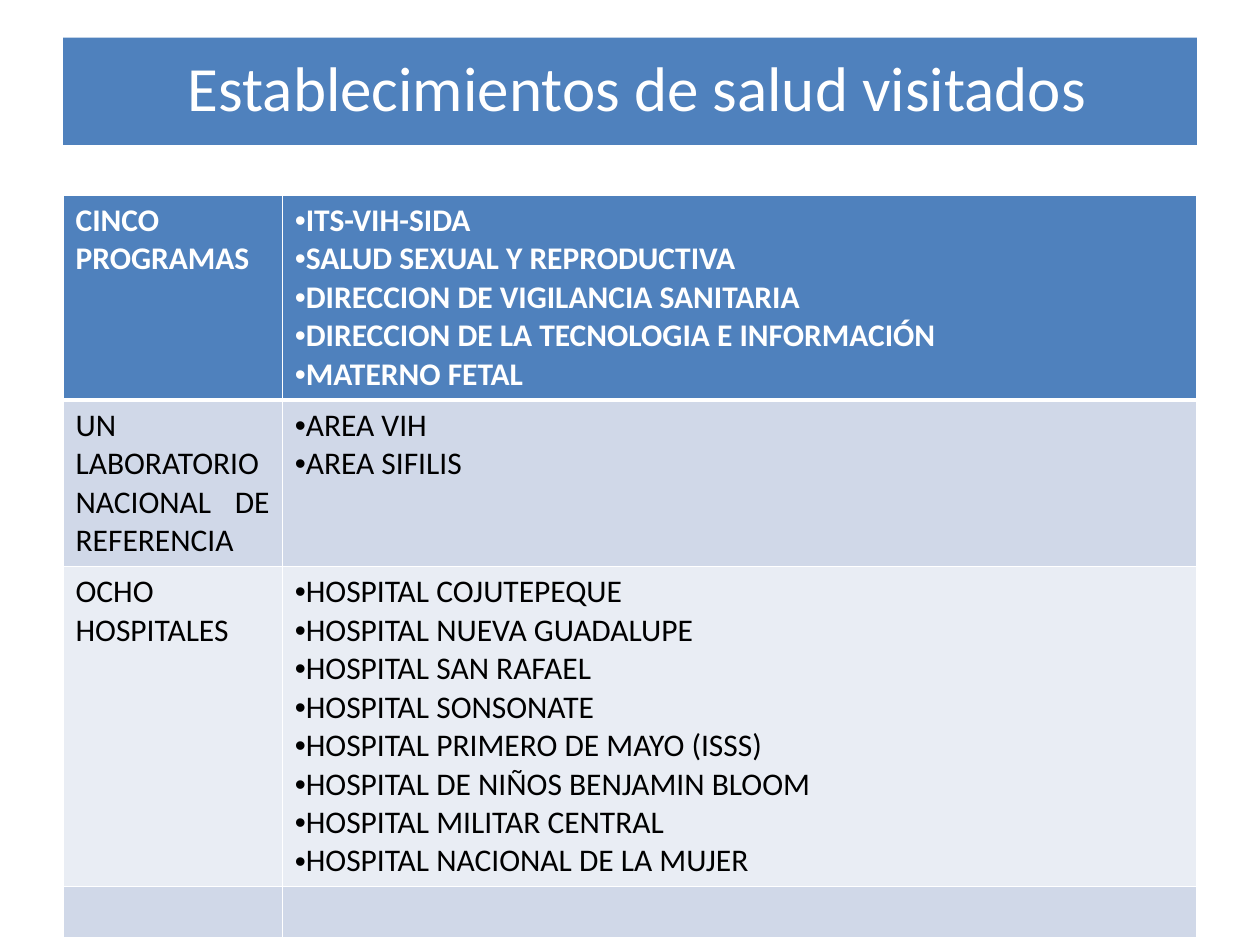
from lxml import etree
from pptx import Presentation
from pptx.dml.color import RGBColor
from pptx.enum.text import MSO_ANCHOR, PP_ALIGN
from pptx.oxml.ns import qn
from pptx.util import Cm, Pt

CENTER, JUSTIFY = PP_ALIGN.CENTER, PP_ALIGN.JUSTIFY
MIDDLE = MSO_ANCHOR.MIDDLE
BLUE = RGBColor(0x4F, 0x81, 0xBD)
BAND_DARK = RGBColor(0xD0, 0xD8, 0xE8)
BAND_LIGHT = RGBColor(0xE9, 0xED, 0xF4)
WHITE = RGBColor(0xFF, 0xFF, 0xFF)
BLACK = RGBColor(0, 0, 0)

# Group, places visited, row height in cm
VISITS = [
    ("CINCO PROGRAMAS",
     ["ITS-VIH-SIDA", "SALUD SEXUAL Y REPRODUCTIVA",
      "DIRECCION DE VIGILANCIA SANITARIA",
      "DIRECCION DE LA TECNOLOGIA E INFORMACIÓN", "MATERNO FETAL"], 4.12),
    ("UN LABORATORIO NACIONAL DE REFERENCIA",
     ["AREA VIH", "AREA SIFILIS"], 3.36),
    ("OCHO HOSPITALES",
     ["HOSPITAL COJUTEPEQUE", "HOSPITAL NUEVA GUADALUPE",
      "HOSPITAL SAN RAFAEL", "HOSPITAL SONSONATE",
      "HOSPITAL PRIMERO DE MAYO (ISSS)", "HOSPITAL DE NIÑOS BENJAMIN BLOOM",
      "HOSPITAL MILITAR CENTRAL", "HOSPITAL NACIONAL DE LA MUJER"], 6.45),
    ("", [""], 1.03),
]


def write(paragraph, text, size=18, color=BLACK, bold=False, align=JUSTIFY,
          bullet=False):
    paragraph.alignment = align
    if bullet:
        properties = paragraph._p.get_or_add_pPr()
        properties.set("marL", "0")
        properties.set("indent", "0")
        etree.SubElement(properties, qn("a:buFont")).set("typeface", "Arial")
        etree.SubElement(properties, qn("a:buChar")).set("char", "•")
    if text:
        paragraph.add_run().text = text
    for font in [paragraph.font] + [run.font for run in paragraph.runs]:
        font.name = "Calibri"
        font.size = Pt(size)
        font.bold = bold
        font.color.rgb = color


def style_cell(cell, fill, bottom_width):
    properties = cell._tc.get_or_add_tcPr()
    for side in ("lnL", "lnR", "lnT", "lnB"):
        width = bottom_width if side == "lnB" else 1
        border = etree.SubElement(properties, qn(f"a:{side}"), w=str(Pt(width)))
        line_fill = etree.SubElement(border, qn("a:solidFill"))
        etree.SubElement(line_fill, qn("a:srgbClr"), val=str(WHITE))
    cell.fill.solid()
    cell.fill.fore_color.rgb = fill


presentation = Presentation()
presentation.slide_width = Cm(25.4)
presentation.slide_height = Cm(19.05)
slide = presentation.slides.add_slide(presentation.slide_layouts[5])

# Table of visited places
visits = slide.shapes.add_table(
    len(VISITS), 2, Cm(1.27), Cm(3.93), Cm(22.86), Cm(14.96)).table
visits.columns[0].width = Cm(4.42)
visits.columns[1].width = Cm(18.44)
for index, (group, places, height) in enumerate(VISITS):
    header = index == 0
    color = WHITE if header else BLACK
    fill = BLUE if header else BAND_DARK if index % 2 else BAND_LIGHT
    visits.rows[index].height = Cm(height)
    group_cell, places_cell = visits.rows[index].cells
    for cell in (group_cell, places_cell):
        style_cell(cell, fill, 3 if header else 1)
    write(group_cell.text_frame.paragraphs[0], group, color=color, bold=header)
    for number, place in enumerate(places):
        frame = places_cell.text_frame
        paragraph = frame.add_paragraph() if number else frame.paragraphs[0]
        write(paragraph, place, color=color, bold=header, bullet=bool(place))

# Title band
title = slide.shapes.title
title.left, title.top, title.width, title.height = (
    Cm(1.27), Cm(0.76), Cm(22.86), Cm(2.16))
title.fill.solid()
title.fill.fore_color.rgb = BLUE
title.text_frame.vertical_anchor = MIDDLE
title.text_frame.margin_bottom = Cm(0.33)
write(title.text_frame.paragraphs[0], " Establecimientos de salud visitados",
      size=36, color=WHITE, align=CENTER)

presentation.save("out.pptx")
